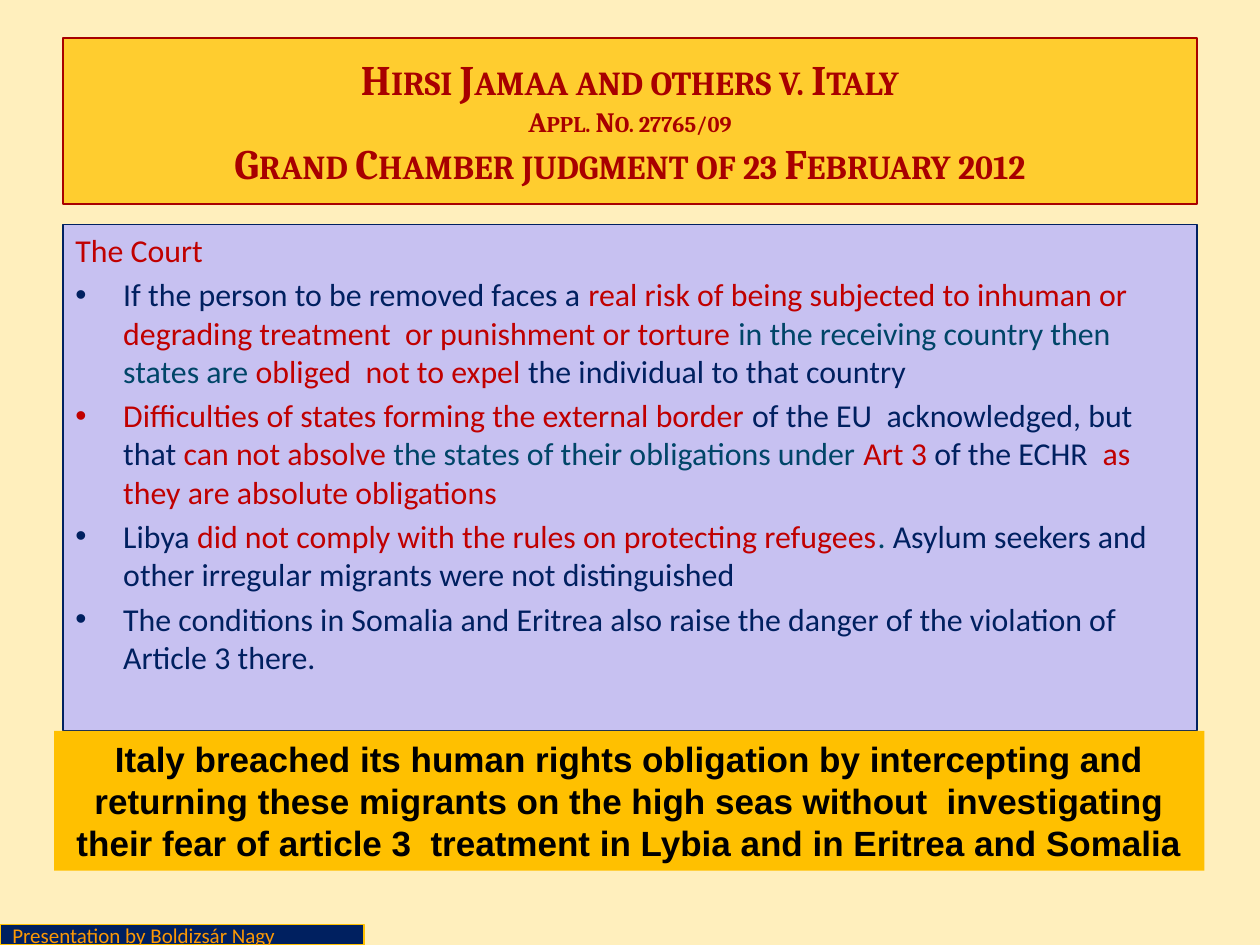
from copy import deepcopy

from lxml.etree import SubElement
from pptx import Presentation
from pptx.dml.color import RGBColor
from pptx.enum.shapes import MSO_SHAPE as Shape
from pptx.enum.text import MSO_ANCHOR as Anchor, MSO_AUTO_SIZE as AutoSize, PP_ALIGN as Align
from pptx.oxml.ns import qn
from pptx.util import Inches, Pt

THEME = {
    "background": "FFEFBD", "title_fill": "FFCD2F", "title": "A80000",
    "body_fill": "C7C1F1", "navy": "002060", "red": "C00000", "teal": "004568",
    "gold": "FFC000", "orange": "FC9804", "black": "000000",
    "title_size": 24, "subtitle_size": 16, "body_size": 18.2,
    "verdict_size": 20, "footer_size": 12, "body_gap": 3.6,
    "title_font": "Cambria", "body_font": "Calibri", "verdict_font": "Arial",
}
WIDTH, HEIGHT = Inches(10), Inches(7.5)
MARGIN = 0.5
INDENT = Inches(0.38)


def style_box(shape, place, fill, line=None, line_width=0.75, anchor=Anchor.TOP):
    """Place a box (inches), paint it and prepare its text frame."""
    shape.left, shape.top, shape.width, shape.height = map(Inches, place)
    shape.fill.solid()
    shape.fill.fore_color.rgb = RGBColor.from_string(THEME[fill])
    if line:
        shape.line.color.rgb = RGBColor.from_string(THEME[line])
        shape.line.width = Pt(line_width)
    else:
        shape.line.fill.background()
    frame = shape.text_frame
    frame.word_wrap = True
    frame.auto_size = AutoSize.NONE
    frame.vertical_anchor = anchor
    return frame


def style_run(run, font, size, color, bold=False):
    run.font.name = THEME[font]
    run.font.size = Pt(THEME[size])
    run.font.bold = bold
    run.font.color.rgb = RGBColor.from_string(THEME[color])


presentation = Presentation()
presentation.slide_width, presentation.slide_height = WIDTH, HEIGHT
slide = presentation.slides.add_slide(presentation.slide_layouts[5])
slide.background.fill.solid()
slide.background.fill.fore_color.rgb = RGBColor.from_string(THEME["background"])

# Title: one paragraph of three lines in small capitals
frame = style_box(slide.shapes.title, (MARGIN, 0.3, 10 - 2 * MARGIN, 1.32),
                  "title_fill", "title", 1.25, Anchor.MIDDLE)
frame.text = ("Hirsi Jamaa and others v. Italy\vAppl. No. 27765/09\v"
              "Grand Chamber judgment of 23 February 2012")
paragraph = frame.paragraphs[0]
paragraph.alignment = Align.CENTER
for run, size in zip(paragraph.runs, ("title_size", "subtitle_size", "title_size")):
    style_run(run, "title_font", size, "title", bold=True)
    properties = run.font._element
    properties.set("cap", "small")
    line_break = run._r.getnext()
    if line_break is not None and line_break.tag == qn("a:br"):
        line_break.insert(0, deepcopy(properties))

# Findings of the court: each paragraph is a list of (color, text) pieces
findings = [
    [("red", "The Court")],
    [("navy", "If the person to be removed faces a "),
     ("red", "real risk of being subjected to inhuman or degrading treatment  "
             "or punishment or torture "),
     ("teal", "in the receiving country then states are "),
     ("red", "obliged  not to expel "),
     ("navy", "the individual to that country")],
    [("red", "Difficulties of states forming the external border "),
     ("navy", "of the EU  acknowledged, but that "),
     ("red", "can not absolve"),
     ("teal", " the states of their obligations under "),
     ("red", "Art 3 "),
     ("navy", "of the ECHR "),
     ("red", " as  they are absolute obligations")],
    [("navy", "Libya "),
     ("red", "did not comply with the rules on protecting refugees"),
     ("teal", ". "),
     ("navy", "Asylum seekers and other irregular migrants were not distinguished")],
    [("navy", "The conditions in Somalia and Eritrea also raise the danger of the "
              "violation of Article 3 there.")],
]
body = slide.shapes.add_shape(Shape.RECTANGLE, 0, 0, 0, 0)
body.shadow.inherit = False
frame = style_box(body, (MARGIN, 1.78, 10 - 2 * MARGIN, 4.02), "body_fill", "navy")
for index, pieces in enumerate(findings):
    paragraph = frame.add_paragraph() if index else frame.paragraphs[0]
    paragraph.alignment = Align.LEFT
    paragraph.space_before = Pt(THEME["body_gap"])
    for color, text in pieces:
        run = paragraph.add_run()
        run.text = text
        style_run(run, "body_font", "body_size", color)
    properties = paragraph._p.get_or_add_pPr()
    properties.set("marL", str(INDENT))
    properties.set("indent", str(-INDENT))
    if index:
        SubElement(properties, qn("a:buFont"), typeface="Arial")
        SubElement(properties, qn("a:buChar"), char="•")

# Footer credit and verdict
boxes = [
    ((0, 7.34, 2.89, 0.16), "navy", "gold", Anchor.MIDDLE, Align.LEFT,
     ("body_font", "footer_size", "orange", False),
     "Presentation by Boldizsár Nagy"),
    ((0.43, 5.8, 9.13, 1.11), "gold", None, Anchor.TOP, Align.CENTER,
     ("verdict_font", "verdict_size", "black", True),
     "Italy breached its human rights obligation by intercepting and returning "
     "these migrants on the high seas without  investigating their fear of "
     "article 3  treatment in Lybia and in Eritrea and Somalia"),
]
for place, fill, line, anchor, alignment, run_style, text in boxes:
    shape = slide.shapes.add_shape(Shape.RECTANGLE, 0, 0, 0, 0)
    shape.shadow.inherit = False
    frame = style_box(shape, place, fill, line, anchor=anchor)
    frame.text = text
    frame.paragraphs[0].alignment = alignment
    style_run(frame.paragraphs[0].runs[0], *run_style)

presentation.save("out.pptx")
